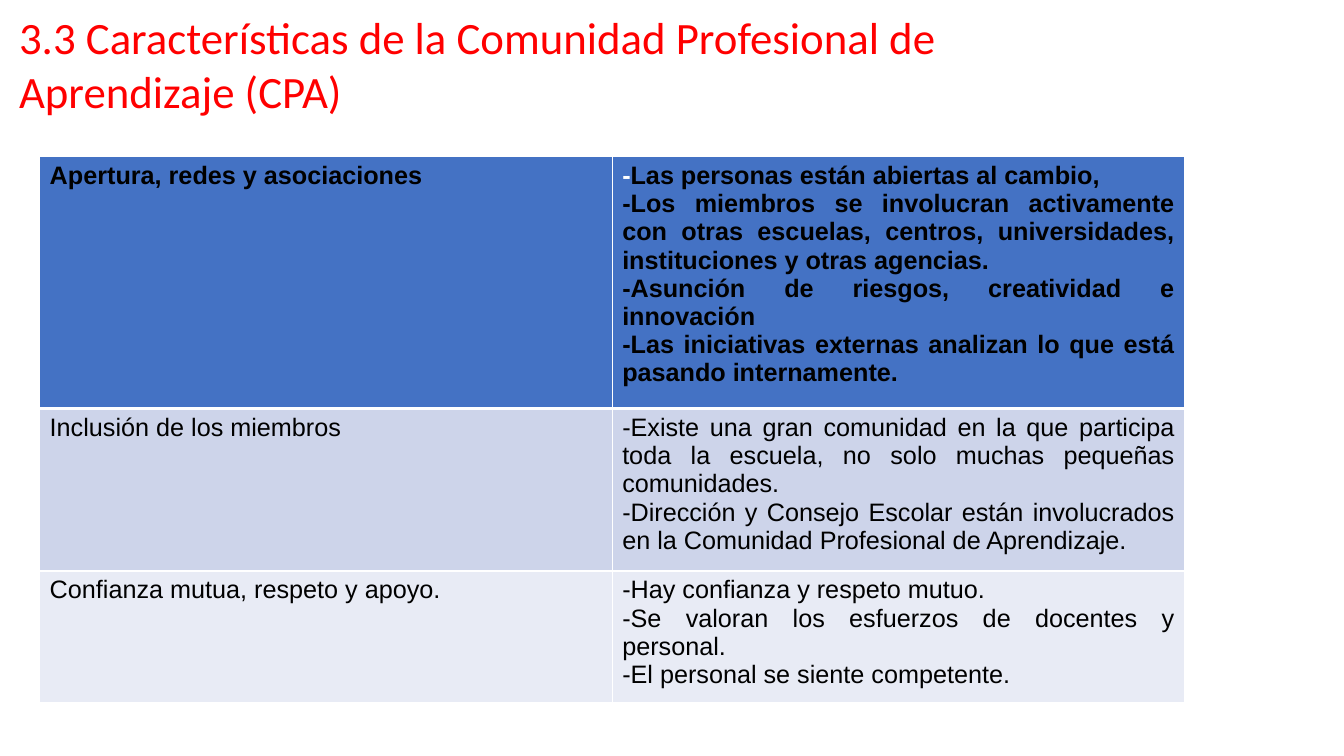
from dataclasses import dataclass

from lxml.etree import SubElement
from pptx import Presentation
from pptx.dml.color import RGBColor
from pptx.enum.text import PP_ALIGN
from pptx.oxml.ns import qn
from pptx.util import Inches, Pt

WIDTH, HEIGHT = Inches(13.33), Inches(7.5)
COLORS = {
    "title": "FF0000",
    "text": "000000",
    "line": "FFFFFF",
    "head": "4472C4",
    "dark": "CDD4EA",
    "light": "E8EBF5",
}


@dataclass
class Row:
    trait: str
    points: list[str]
    share: float
    fill: str
    head: bool = False


ROWS = [
    Row("Apertura, redes y asociaciones",
        ["Las personas están abiertas al cambio,",
         "Los miembros se involucran activamente con otras escuelas, centros, "
         "universidades, instituciones y otras agencias.",
         "Asunción de riesgos, creatividad e innovación",
         "Las iniciativas externas analizan lo que está pasando internamente."],
        33.1, "head", True),
    Row("Inclusión de los miembros",
        ["Existe una gran comunidad en la que participa toda la escuela, "
         "no solo muchas pequeñas comunidades.",
         "Dirección y Consejo Escolar están involucrados en la Comunidad "
         "Profesional de Aprendizaje."],
        21.5, "dark"),
    Row("Confianza mutua, respeto y apoyo.",
        ["Hay confianza y respeto mutuo.",
         "Se valoran los esfuerzos de docentes y personal.",
         "El personal se siente competente."],
        17.3, "light"),
]


def wide(share: float) -> int:
    """Percent of the slide's width."""
    return round(WIDTH * share / 100)


def high(share: float) -> int:
    """Percent of the slide's height."""
    return round(HEIGHT * share / 100)


def style(run, face: str, size: int, color: str, bold: bool = False) -> None:
    run.font.name = face
    run.font.size = Pt(size)
    run.font.bold = bold
    run.font.color.rgb = RGBColor.from_string(COLORS[color])


def border(cell, head: bool) -> None:
    props = cell._tc.get_or_add_tcPr()
    for side in "LRTB":
        points = 3 if head and side == "B" or not head and False else 1
        line = SubElement(props, qn(f"a:ln{side}"), w=str(Pt(points)))
        fill = SubElement(line, qn("a:solidFill"))
        SubElement(fill, qn("a:srgbClr"), val=COLORS["line"])


def paint(cell, lines: list[str], row: Row) -> None:
    """Write the lines and give the cell its borders and fill."""
    cell.text_frame.text = "\n".join(lines)
    for para in cell.text_frame.paragraphs:
        for run in para.runs:
            style(run, "Arial", 18, "text", row.head)
    border(cell, row.head)
    cell.fill.solid()
    cell.fill.fore_color.rgb = RGBColor.from_string(COLORS[row.fill])


def add_title(slide) -> None:
    box = slide.shapes.add_textbox(wide(0.68), high(0.67), wide(72.9), high(15.7))
    frame = box.text_frame
    frame.word_wrap = True
    frame.text = "3.3 Características de la Comunidad Profesional de Aprendizaje (CPA)"
    style(frame.paragraphs[0].runs[0], "Calibri", 32, "title")


def add_traits(slide) -> None:
    total = sum(row.share for row in ROWS)
    table = slide.shapes.add_table(
        len(ROWS), 2, wide(2.95), high(20.7), wide(85.2), high(total)).table
    for column in table.columns:
        column.width = wide(42.6)
    for index, row in enumerate(ROWS):
        table.rows[index].height = high(row.share)
        left, right = table.cell(index, 0), table.cell(index, 1)
        paint(left, [row.trait], row)
        paint(right, ["-" + point for point in row.points], row)
        for para in right.text_frame.paragraphs:
            para.alignment = PP_ALIGN.JUSTIFY

    first = table.cell(0, 1).text_frame.paragraphs[0]
    first.runs[0].text = "-"
    style(first.runs[0], "Arial", 18, "line", True)
    rest = first.add_run()
    rest.text = ROWS[0].points[0]
    style(rest, "Arial", 18, "text", True)


def main() -> None:
    deck = Presentation()
    deck.slide_width, deck.slide_height = WIDTH, HEIGHT
    slide = deck.slides.add_slide(deck.slide_layouts[6])
    add_title(slide)
    add_traits(slide)
    deck.save("out.pptx")


if __name__ == "__main__":
    main()
